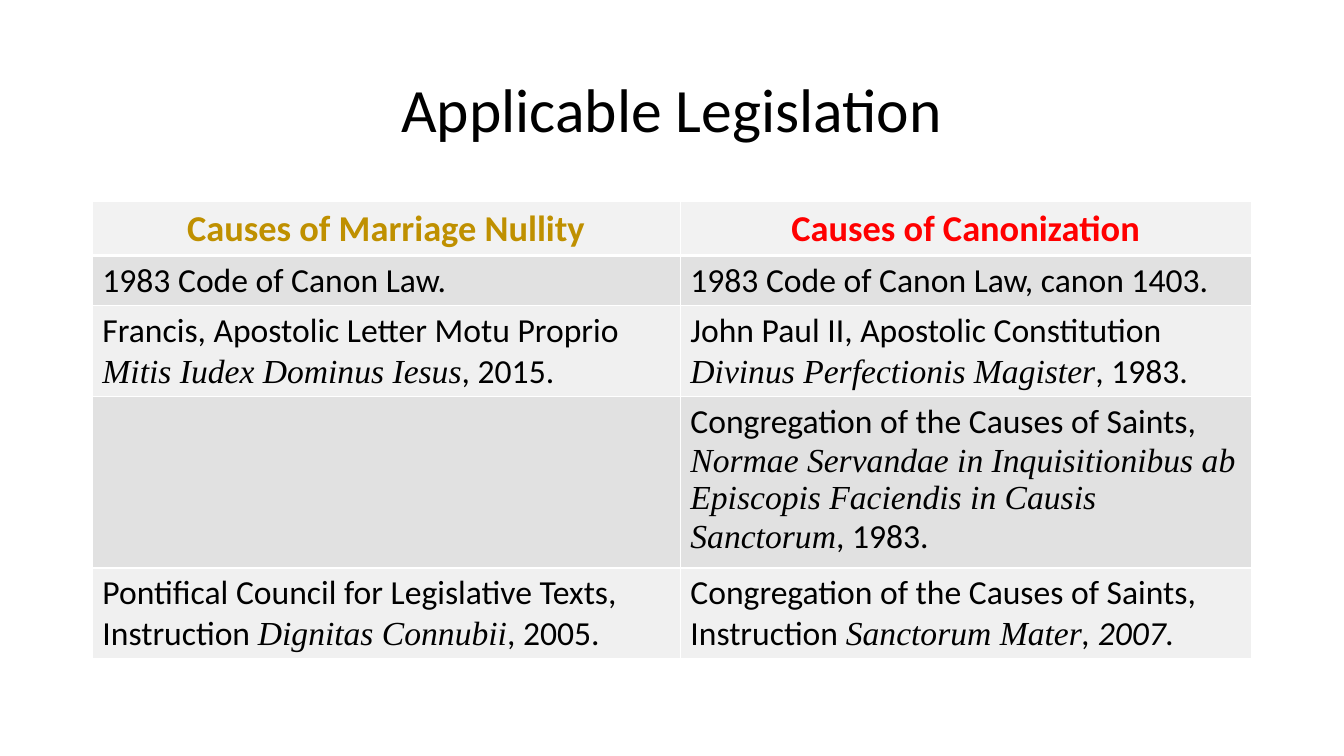
from dataclasses import dataclass

import pptx
import pptx.dml.color
import pptx.enum.text
import pptx.oxml
import pptx.oxml.ns
import pptx.util

PX = 9525  # EMU per px, 96 px to the inch
COLORS = {
    "text": "000000", "gold": "BF9000", "red": "FF0000", "border": "FFFFFF",
    "header": "F2F2F2", "dark": "E1E1E1", "light": "F0F0F0",
}
SANS, SERIF = "Calibri", "Times New Roman"
CENTER = pptx.enum.text.PP_ALIGN.CENTER
LEFT = pptx.enum.text.PP_ALIGN.LEFT


@dataclass(frozen=True)
class Run:
    text: str
    font: str = SANS
    size: int = 24
    color: str = "text"
    bold: bool = False
    italic: bool = False


def latin(text: str) -> Run:
    return Run(text, font=SERIF, italic=True)


def heading(text: str, color: str) -> Run:
    return Run(text, size=26, color=color, bold=True)


# Table content: rows of cells, each cell a list of runs
COL_WIDTHS = (560, 544)
ROW_HEIGHT = 39
ROWS = [
    [[heading("Causes of Marriage Nullity", "gold")],
     [heading("Causes of Canonization", "red")]],
    [[Run("1983 Code of Canon Law.")],
     [Run("1983 Code of Canon Law, canon 1403.")]],
    [[Run("Francis, Apostolic Letter Motu Proprio "),
      latin("Mitis Iudex Dominus Iesus"), Run(", 2015.")],
     [Run("John Paul II, Apostolic Constitution "),
      latin("Divinus Perfectionis Magister"), Run(", 1983.")]],
    [[],
     [Run("Congregation of the Causes of Saints, "),
      latin("Normae Servandae in Inquisitionibus ab Episcopis Faciendis "
            "in Causis Sanctorum"), Run(", 1983.")]],
    [[Run("Pontifical Council for Legislative Texts, Instruction "),
      latin("Dignitas Connubii"), Run(", 2005.")],
     [Run("Congregation of the Causes of Saints, Instruction "),
      latin("Sanctorum Mater"), Run(", 2007.", italic=True)]],
]


def px(n: int) -> pptx.util.Emu:
    return pptx.util.Emu(n * PX)


def rgb(name: str) -> pptx.dml.color.RGBColor:
    return pptx.dml.color.RGBColor.from_string(COLORS[name])


def add_runs(p, runs: list[Run], align) -> None:
    p.alignment = align
    for run in runs:
        r = p.add_run()
        r.text = run.text
        r.font.name = run.font
        r.font.size = pptx.util.Pt(run.size)
        r.font.bold = run.bold
        r.font.italic = run.italic
        r.font.color.rgb = rgb(run.color)


def add_title(slide, run: Run) -> None:
    sp = slide.shapes.add_textbox(px(88), px(38), px(1104), px(139))
    tf = sp.text_frame
    tf.word_wrap = True
    tf.vertical_anchor = pptx.enum.text.MSO_ANCHOR.MIDDLE
    p = tf.paragraphs[0]
    p.line_spacing = 0.9
    add_runs(p, [run], CENTER)


def set_borders(cell, top: int, bottom: int) -> None:
    tc_pr = cell._tc.get_or_add_tcPr()
    for side, width in (("L", 1), ("R", 1), ("T", top), ("B", bottom)):
        tc_pr.append(pptx.oxml.parse_xml(
            f'<a:ln{side} {pptx.oxml.ns.nsdecls("a")} w="{pptx.util.Pt(width)}">'
            f'<a:solidFill><a:srgbClr val="{COLORS["border"]}"/></a:solidFill>'
            f'</a:ln{side}>'))


def add_legislation_table(slide) -> None:
    table = slide.shapes.add_table(
        len(ROWS), len(COL_WIDTHS), px(88), px(192),
        px(sum(COL_WIDTHS)), px(ROW_HEIGHT * len(ROWS))).table
    for column, width in zip(table.columns, COL_WIDTHS):
        column.width = px(width)
    for i, row in enumerate(ROWS):
        table.rows[i].height = px(ROW_HEIGHT)
        band = "header" if i == 0 else "dark" if i % 2 else "light"
        for j, runs in enumerate(row):
            cell = table.cell(i, j)
            # The rule under the header row is thicker
            set_borders(cell, 3 if i == 1 else 1, 3 if i == 0 else 1)
            cell.fill.solid()
            cell.fill.fore_color.rgb = rgb(band)
            add_runs(cell.text_frame.paragraphs[0], runs,
                     CENTER if i == 0 else LEFT)


def main() -> None:
    prs = pptx.Presentation()
    prs.slide_width, prs.slide_height = px(1280), px(720)
    slide = prs.slides.add_slide(prs.slide_layouts[6])
    add_title(slide, Run("Applicable Legislation", size=44))
    add_legislation_table(slide)
    prs.save("out.pptx")


if __name__ == "__main__":
    main()
